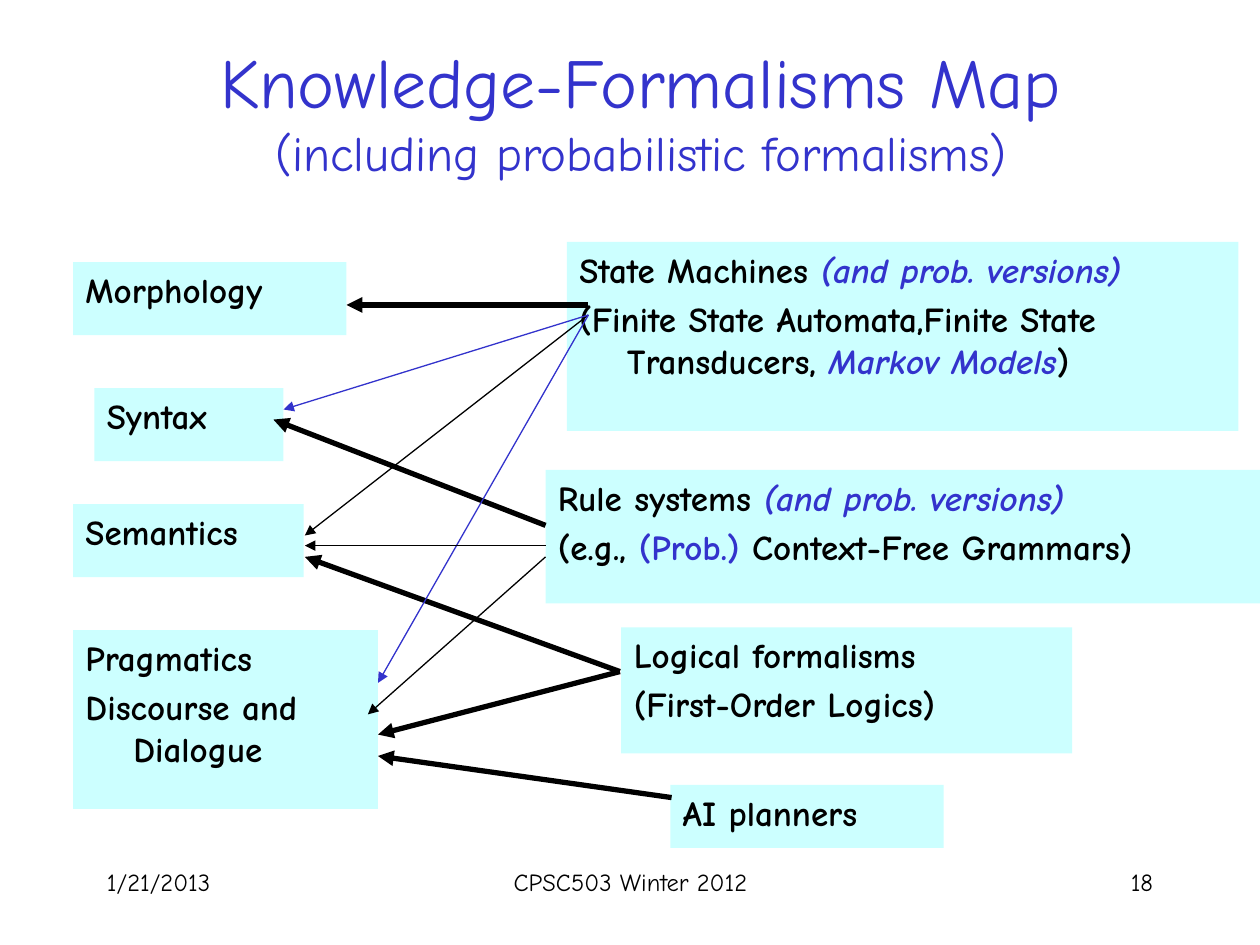
from lxml.etree import SubElement
from pptx import Presentation
from pptx.dml.color import RGBColor
from pptx.enum.shapes import MSO_CONNECTOR as Connector, MSO_SHAPE as Shape
from pptx.enum.text import MSO_ANCHOR as Anchor, MSO_AUTO_SIZE as AutoSize, PP_ALIGN as Align
from pptx.oxml.ns import qn
from pptx.util import Inches, Pt

COLORS = {"text": "000000", "accent": "3333CC", "panel": "CCFFFF"}
FONT = "Comic Neue"


class MapSlide:
    def __init__(self, deck):
        self.slide = deck.slides.add_slide(deck.slide_layouts[1])

    def color(self, name):
        return RGBColor.from_string(COLORS[name])

    def place(self, shape, bounds):
        shape.left, shape.top, shape.width, shape.height = map(Inches, bounds)

    def style(self, para, size, color="text", align=Align.LEFT, bold=False):
        para.alignment = align
        para.font.name = FONT
        para.font.size = Pt(size)
        para.font.bold = bold
        para.font.color.rgb = self.color(color)

    def title(self, bounds, heading, subheading):
        box = self.slide.shapes.title
        self.place(box, bounds)
        frame = box.text_frame
        frame.auto_size = AutoSize.NONE
        frame.vertical_anchor = Anchor.MIDDLE
        para = frame.paragraphs[0]
        self.style(para, 40, "accent", Align.CENTER)
        para.add_run().text = heading
        para.add_line_break()
        span = para.add_run()
        span.text = subheading
        span.font.size = Pt(28)

    def footer(self, bounds, text, align):
        box = self.slide.shapes.add_textbox(*map(Inches, bounds))
        box.text_frame.word_wrap = True
        para = box.text_frame.paragraphs[0]
        para.text = text
        self.style(para, 14, align=align)

    def body(self, bounds, lines):
        box = self.slide.placeholders[1]
        self.place(box, bounds)
        self.fill_panel(box, lines)

    def panel(self, bounds, lines):
        box = self.slide.shapes.add_shape(Shape.RECTANGLE, *map(Inches, bounds))
        box.shadow.inherit = False
        box.line.fill.background()
        self.fill_panel(box, lines)

    def fill_panel(self, box, lines):
        box.fill.solid()
        box.fill.fore_color.rgb = self.color("panel")
        frame = box.text_frame
        frame.word_wrap = True
        frame.auto_size = AutoSize.NONE
        frame.vertical_anchor = Anchor.TOP
        for index, line in enumerate(lines):
            para = frame.add_paragraph() if index else frame.paragraphs[0]
            self.style(para, 20, bold=True)
            para.space_before = Pt(4)
            properties = para._p.get_or_add_pPr()
            properties.set("marL", str(Inches(0.38)))
            properties.set("indent", str(Inches(-0.38)))
            properties.insert_element_before(
                properties.makeelement(qn("a:buNone"), {}), "a:tabLst", "a:defRPr", "a:extLst")
            for text, color, italic in line:
                span = para.add_run()
                span.text = text
                span.font.color.rgb = self.color(color)
                span.font.italic = italic

    def arrow(self, start, end, width, color="text"):
        line = self.slide.shapes.add_connector(
            Connector.STRAIGHT, *map(Inches, start + end))
        line.line.width = Pt(width)
        line.line.color.rgb = self.color(color)
        SubElement(line.line._get_or_add_ln(), qn("a:tailEnd"), type="triangle")
        SubElement(line._element.spPr, qn("a:effectLst"))


def plain(text):
    return text, "text", False


def accent(text, italic=True):
    return text, "accent", italic


def main():
    deck = Presentation()
    deck.slide_width, deck.slide_height = Inches(10), Inches(7.5)
    page = MapSlide(deck)

    page.title((1, 0.25, 8.17, 1.25), "Knowledge-Formalisms Map",
               "(including probabilistic formalisms)")
    page.footer((0.75, 6.83, 2.08, 0.5), "1/21/2013", Align.LEFT)
    page.footer((3.42, 6.83, 3.17, 0.5), "CPSC503 Winter 2012", Align.CENTER)
    page.footer((7.17, 6.83, 2.08, 0.5), "18", Align.RIGHT)

    page.body((4.93, 4.98, 3.58, 1),
              [[plain("Logical formalisms")], [plain("(First-Order Logics)")]])
    versions = accent("(and prob. versions)")
    page.panel((4.33, 3.73, 5.67, 1.06), [
        [plain("Rule systems "), versions],
        [plain("(e.g., "), accent("(Prob.)", italic=False),
         plain(" Context-Free Grammars)")],
    ])
    page.panel((4.5, 1.92, 5.33, 1.5), [
        [plain("State Machines "), versions],
        [plain("(Finite State Automata,Finite State Transducers, "),
         accent("Markov Models"), plain(")")],
    ])
    page.panel((5.32, 6.23, 2.17, 0.5), [[plain("AI planners")]])

    page.panel((0.58, 2.08, 2.17, 0.58), [[plain("Morphology")]])
    page.panel((0.75, 3.08, 1.5, 0.58), [[plain("Syntax")]])
    page.panel((0.58, 4, 1.83, 0.58), [[plain("Semantics")]])
    page.panel((0.58, 5, 2.42, 1.42),
               [[plain("Pragmatics")], [plain("Discourse and Dialogue")]])

    main_links = [
        ((4.67, 2.42), (2.75, 2.42)),
        ((4.33, 4.17), (2.17, 3.33)),
        ((4.92, 5.33), (2.42, 4.42)),
        ((4.92, 5.33), (3, 5.83)),
        ((5.33, 6.33), (3, 6)),
    ]
    for start, end in main_links:
        page.arrow(start, end, 3)

    state_machines = (4.67, 2.5)
    minor_links = [
        (state_machines, (2.42, 4.25), "text"),
        (state_machines, (3, 5.42), "accent"),
        ((4.33, 4.33), (2.42, 4.33), "text"),
        ((4.33, 4.42), (2.92, 5.67), "text"),
        (state_machines, (2.25, 3.25), "accent"),
    ]
    for start, end, color in minor_links:
        page.arrow(start, end, 0.75, color)

    deck.save("out.pptx")


if __name__ == "__main__":
    main()
